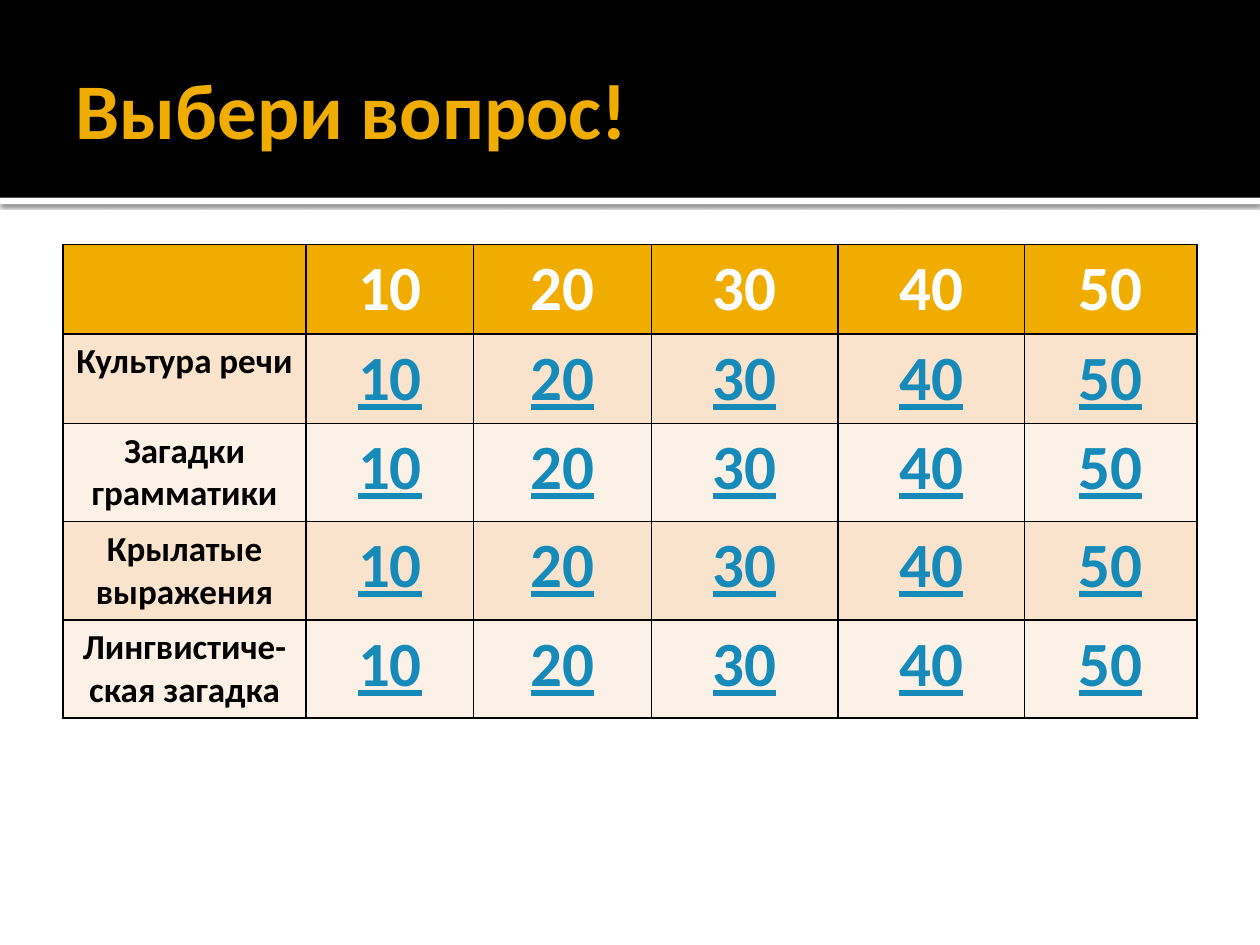
from lxml.etree import SubElement
from pptx import Presentation
from pptx.dml.color import RGBColor
from pptx.enum.shapes import MSO_SHAPE as Shape
from pptx.enum.text import MSO_ANCHOR as Anchor, PP_ALIGN as Align
from pptx.oxml.ns import qn
from pptx.util import Inches, Pt

GOLD, BLACK, WHITE, LINK = "F0AD00", "000000", "FFFFFF", "168BBA"
BANDS = ["F9E3CC", "FCF1E7"]
POINTS = ["10", "20", "30", "40", "50"]
TOPICS = ["Культура речи", "Загадки грамматики", "Крылатые выражения",
          "Лингвистиче-\nская загадка"]
COLUMN_WIDTHS = [1.93, 1.33, 1.41, 1.48, 1.48, 1.37]
ROW_HEIGHTS = [0.71, 0.71, 0.78, 0.78, 0.78]


def set_color(color_format, value):
    color_format.rgb = RGBColor.from_string(value)


def set_fill(target, value):
    target.fill.solid()
    set_color(target.fill.fore_color, value)


def write(frame, text, size=36, color=BLACK, align=Align.CENTER, underline=False):
    frame.text = text
    for paragraph in frame.paragraphs:
        paragraph.alignment = align
        for run in paragraph.runs:
            font = run.font
            font.name, font.size, font.bold = "Calibri", Pt(size), True
            font.underline = underline
            set_color(font.color, color)


def add_band(slide, top, height, color):
    band = slide.shapes.add_shape(Shape.RECTANGLE, 0, Inches(top), Inches(10), Inches(height))
    band.shadow.inherit = False
    set_fill(band, color)
    band.line.fill.background()
    return band


def add_shadow(shape):
    effects = shape._element.spPr.find(qn("a:effectLst"))
    shadow = SubElement(effects, qn("a:outerShdw"), blurRad=str(Pt(2.5)),
                        dist=str(Pt(0.8)), dir="5400000", rotWithShape="0")
    shade = SubElement(shadow, qn("a:srgbClr"), val=BLACK)
    SubElement(shade, qn("a:alpha"), val="60000")


def add_title(slide, text):
    title = slide.shapes.add_textbox(Inches(0.5), Inches(0.17), Inches(9), Inches(1.37))
    frame = title.text_frame
    frame.word_wrap = True
    frame.vertical_anchor = Anchor.MIDDLE
    frame.margin_right = Inches(0.05)
    write(frame, text, size=45, color=GOLD, align=Align.LEFT)


def add_borders(cell):
    properties = cell._tc.get_or_add_tcPr()
    # Borders come before the fill in the cell properties
    for index, side in enumerate(["lnL", "lnR", "lnT", "lnB"]):
        border = properties.makeelement(qn(f"a:{side}"), {"w": str(Pt(1))})
        fill = SubElement(border, qn("a:solidFill"))
        SubElement(fill, qn("a:srgbClr"), val=BLACK)
        properties.insert(index, border)


def fill_cell(cell, background, text="", **text_format):
    set_fill(cell, background)
    add_borders(cell)
    write(cell.text_frame, text, **text_format)


def add_question_board(slide):
    board = slide.shapes.add_table(
        len(ROW_HEIGHTS), len(COLUMN_WIDTHS), Inches(0.5), Inches(1.94),
        Inches(sum(COLUMN_WIDTHS)), Inches(sum(ROW_HEIGHTS))).table
    for column, width in zip(board.columns, COLUMN_WIDTHS):
        column.width = Inches(width)
    for row, height in zip(board.rows, ROW_HEIGHTS):
        row.height = Inches(height)

    # Header row
    for col, label in enumerate([""] + POINTS):
        fill_cell(board.cell(0, col), GOLD, label, color=WHITE)

    # One row of questions per topic
    for row, topic in enumerate(TOPICS, start=1):
        background = BANDS[(row - 1) % 2]
        fill_cell(board.cell(row, 0), background, topic, size=20)
        for col, points in enumerate(POINTS, start=1):
            fill_cell(board.cell(row, col), background, points, color=LINK, underline=True)


def main():
    deck = Presentation()
    deck.slide_width, deck.slide_height = Inches(10), Inches(7.5)
    slide = deck.slides.add_slide(deck.slide_layouts[6])

    # Title band with a shadowed white edge
    add_shadow(add_band(slide, 1.57, 0.05, WHITE))
    add_band(slide, 0, 1.57, BLACK)
    add_title(slide, "Выбери вопрос!")

    add_question_board(slide)
    deck.save("out.pptx")


if __name__ == "__main__":
    main()
